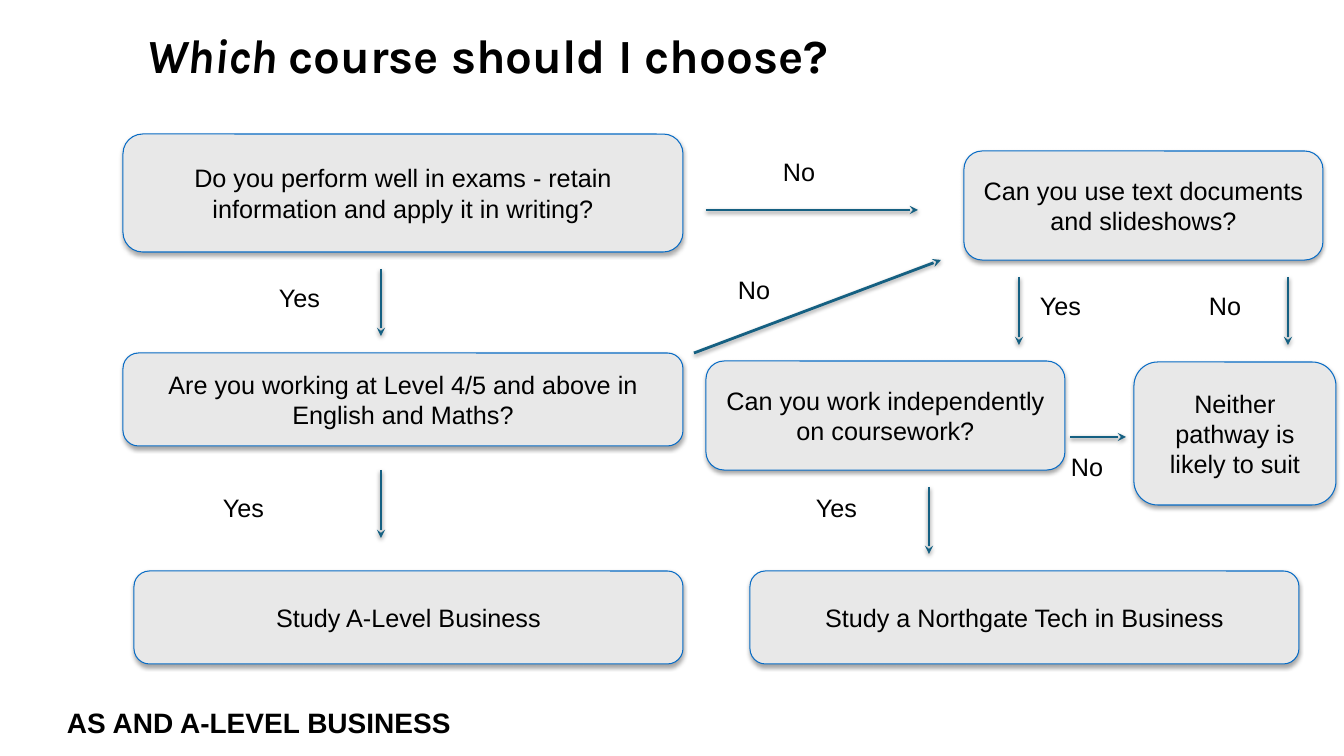
from lxml.etree import SubElement
from pptx import Presentation
from pptx.dml.color import RGBColor
from pptx.enum.shapes import MSO_CONNECTOR, MSO_SHAPE
from pptx.enum.text import MSO_ANCHOR, MSO_AUTO_SIZE, PP_ALIGN
from pptx.oxml.ns import qn
from pptx.util import Pt

PX = 914400 / 100.8
COLOURS = {"text": "000000", "box": "E8E8E8", "border": "096CC5", "arrow": "156082"}
BODY = {"name": "Arial", "size": Pt(18)}
FOOTER = {"name": "Arial", "size": Pt(20), "bold": True}
TITLE = {"name": "Karla", "size": Pt(34), "bold": True}


def add_span(para, text, formats):
    span = para.add_run()
    span.text = text
    for name, value in formats.items():
        setattr(span.font, name, value)
    span.font.color.rgb = RGBColor.from_string(COLOURS["text"])


def add_shadow(properties, distance, opacity):
    effects = properties.find(qn("a:effectLst"))
    if effects is None:
        effects = SubElement(properties, qn("a:effectLst"))
    shadow = SubElement(effects, qn("a:outerShdw"), blurRad=str(Pt(3.1)),
                        dist=str(Pt(distance)), dir="5400000", rotWithShape="0")
    black = SubElement(shadow, qn("a:srgbClr"), val="000000")
    SubElement(black, qn("a:alpha"), val=str(opacity * 1000))


deck = Presentation()
deck.slide_width, deck.slide_height = round(1344 * PX), round(756 * PX)
page = deck.slides.add_slide(deck.slide_layouts[5])

# Title
title = page.shapes.title
title.left, title.top, title.width, title.height = [round(n * PX) for n in (136, 17, 1208, 82)]
title.text_frame.vertical_anchor = MSO_ANCHOR.MIDDLE
title.text_frame.word_wrap = True
para = title.text_frame.paragraphs[0]
para.alignment = PP_ALIGN.LEFT
para.line_spacing = 0.9
add_span(para, "Which ", TITLE | {"italic": True})
add_span(para, "course should I choose?", TITLE)

# Questions and outcomes
boxes = [
    ("Do you perform well in exams - retain information and apply it in writing?", 123, 134, 560, 118),
    ("Can you use text documents and slideshows?", 964, 151, 359, 109),
    ("Are you working at Level 4/5 and above in English and Maths?", 123, 353, 560, 93),
    ("Can you work independently on coursework?", 706, 361, 359, 109),
    ("Neither pathway is likely to suit", 1134, 362, 202, 143),
    ("Study A-Level Business", 134, 571, 549, 93),
    ("Study a Northgate Tech in Business", 750, 571, 549, 93),
]
for text, *place in boxes:
    box = page.shapes.add_shape(MSO_SHAPE.ROUNDED_RECTANGLE, *[round(n * PX) for n in place])
    box.shadow.inherit = False
    box.fill.solid()
    box.fill.fore_color.rgb = RGBColor.from_string(COLOURS["box"])
    box.line.color.rgb = RGBColor.from_string(COLOURS["border"])
    box.line.width = Pt(0.75)
    add_shadow(box.element.spPr, 1.8, 35)
    box.text_frame.word_wrap = True
    box.text_frame.vertical_anchor = MSO_ANCHOR.MIDDLE
    para = box.text_frame.paragraphs[0]
    para.alignment = PP_ALIGN.CENTER
    add_span(para, text, BODY)

# Arrows between the steps
arrows = [
    (706, 210, 918, 210), (694, 353, 941, 260), (1070, 437, 1126, 437),
    (381, 269, 381, 336), (381, 470, 381, 538), (929, 487, 929, 554),
    (1019, 277, 1019, 345), (1288, 277, 1288, 345),
]
for ends in arrows:
    arrow = page.shapes.add_connector(MSO_CONNECTOR.STRAIGHT, *[round(n * PX) for n in ends])
    arrow.line.color.rgb = RGBColor.from_string(COLOURS["arrow"])
    arrow.line.width = Pt(2)
    SubElement(arrow.line._get_or_add_ln(), qn("a:tailEnd"), type="stealth")
    add_shadow(arrow.element.spPr, 1.6, 38)

# Answers and course name
labels = [
    ("No", 773, 151, 101, 40, BODY), ("No", 728, 269, 79, 40, BODY),
    ("No", 1199, 285, 79, 40, BODY), ("No", 1061, 446, 79, 40, BODY),
    ("Yes", 269, 277, 101, 40, BODY), ("Yes", 213, 487, 101, 40, BODY),
    ("Yes", 1030, 285, 101, 40, BODY), ("Yes", 806, 487, 101, 40, BODY),
    ("AS AND A-LEVEL BUSINESS", 57, 701, 554, 44, FOOTER),
]
for text, *place, formats in labels:
    label = page.shapes.add_textbox(*[round(n * PX) for n in place])
    label.text_frame.word_wrap = True
    label.text_frame.auto_size = MSO_AUTO_SIZE.SHAPE_TO_FIT_TEXT
    add_span(label.text_frame.paragraphs[0], text, formats)

deck.save("out.pptx")
